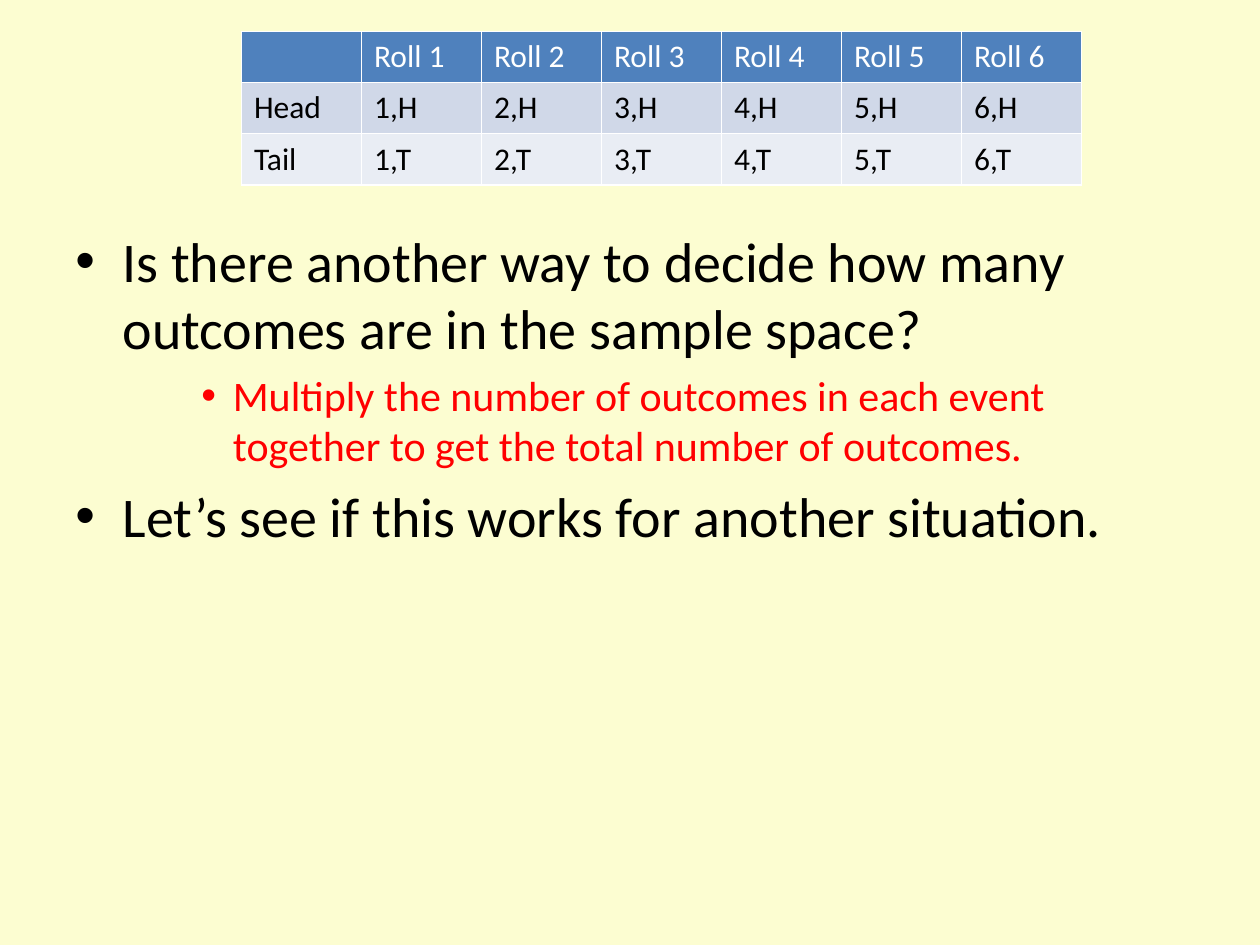
"""Build the slide on counting the outcomes of a coin and a die."""
from lxml import etree
from pptx import Presentation
from pptx import util as u
from pptx.dml.color import RGBColor
from pptx.enum import text
from pptx.oxml.ns import qn

COLOURS = {
    "background": "FCFDD1",
    "header": "4F81BD",
    "band_dark": "D0D8E8",
    "band_light": "E9EDF4",
    "white": "FFFFFF",
    "black": "000000",
    "answer": "FF0000",
}
FORMATS = {
    "question": {"size": 32, "colour": "black", "level": 0, "margin": 27, "hanging": 27},
    "answer": {"size": 24, "colour": "answer", "level": 2, "margin": 90, "hanging": 18},
}


class SlideBuilder:
    def __init__(self, width, height):
        self.font = "Calibri"
        self.deck = Presentation()
        self.deck.slide_width, self.deck.slide_height = u.Pt(width), u.Pt(height)
        self.page = self.deck.slides.add_slide(self.deck.slide_layouts[6])
        self.fill(self.page.background, "background")

    def fill(self, target, colour):
        target.fill.solid()
        target.fill.fore_color.rgb = RGBColor.from_string(COLOURS[colour])

    def span(self, para, wording, size, colour):
        span = para.add_run()
        span.text = wording
        values = {"name": self.font, "size": u.Pt(size), "bold": False}
        for name, value in values.items():
            setattr(span.font, name, value)
        span.font.color.rgb = RGBColor.from_string(COLOURS[colour])

    def bullet(self, para, margin, hanging):
        properties = para._p.get_or_add_pPr()
        properties.set("marL", str(u.Pt(margin)))
        properties.set("indent", str(-u.Pt(hanging)))
        etree.SubElement(properties, qn("a:buFont")).set("typeface", "Arial")
        etree.SubElement(properties, qn("a:buChar")).set("char", "•")

    def bullets(self, left, top, width, height, items):
        box = self.page.shapes.add_textbox(*map(u.Pt, (left, top, width, height)))
        frame = box.text_frame
        values = {"word_wrap": True, "auto_size": text.MSO_AUTO_SIZE.NONE}
        for name, value in values.items():
            setattr(frame, name, value)
        for index, (kind, wording) in enumerate(items):
            para = frame.add_paragraph() if index else frame.paragraphs[0]
            style = FORMATS[kind]
            values = {"level": style["level"], "space_before": u.Pt(style["size"] * 0.2)}
            for name, value in values.items():
                setattr(para, name, value)
            self.bullet(para, style["margin"], style["hanging"])
            self.span(para, wording, style["size"], style["colour"])

    def table(self, left, top, width, height, rows, styles, size):
        area = map(u.Pt, (left, top, width, height))
        table = self.page.shapes.add_table(len(rows), len(rows[0]), *area).table
        for r, (row, (fill, colour)) in enumerate(zip(rows, styles)):
            for c, wording in enumerate(row):
                cell = table.cell(r, c)
                self.fill(cell, fill)
                if wording:
                    self.span(cell.text_frame.paragraphs[0], wording, size, colour)

    def save(self):
        self.deck.save("out.pptx")


def main():
    slide = SlideBuilder(720, 540)
    slide.bullets(36, 126, 648, 356.4, [
        ("question", "Is there another way to decide how many outcomes are in the sample space?"),
        ("answer", "Multiply the number of outcomes in each event together "
                   "to get the total number of outcomes."),
        ("question", "Let’s see if this works for another situation."),
    ])
    rolls = range(1, 7)
    rows = [[""] + [f"Roll {roll}" for roll in rolls]]
    rows += [[side] + [f"{roll},{side[0]}" for roll in rolls] for side in ("Head", "Tail")]
    styles = [("header", "white"), ("band_dark", "black"), ("band_light", "black")]
    slide.table(138, 18, 480, 87.6, rows, styles, 18)
    slide.save()


if __name__ == "__main__":
    main()
